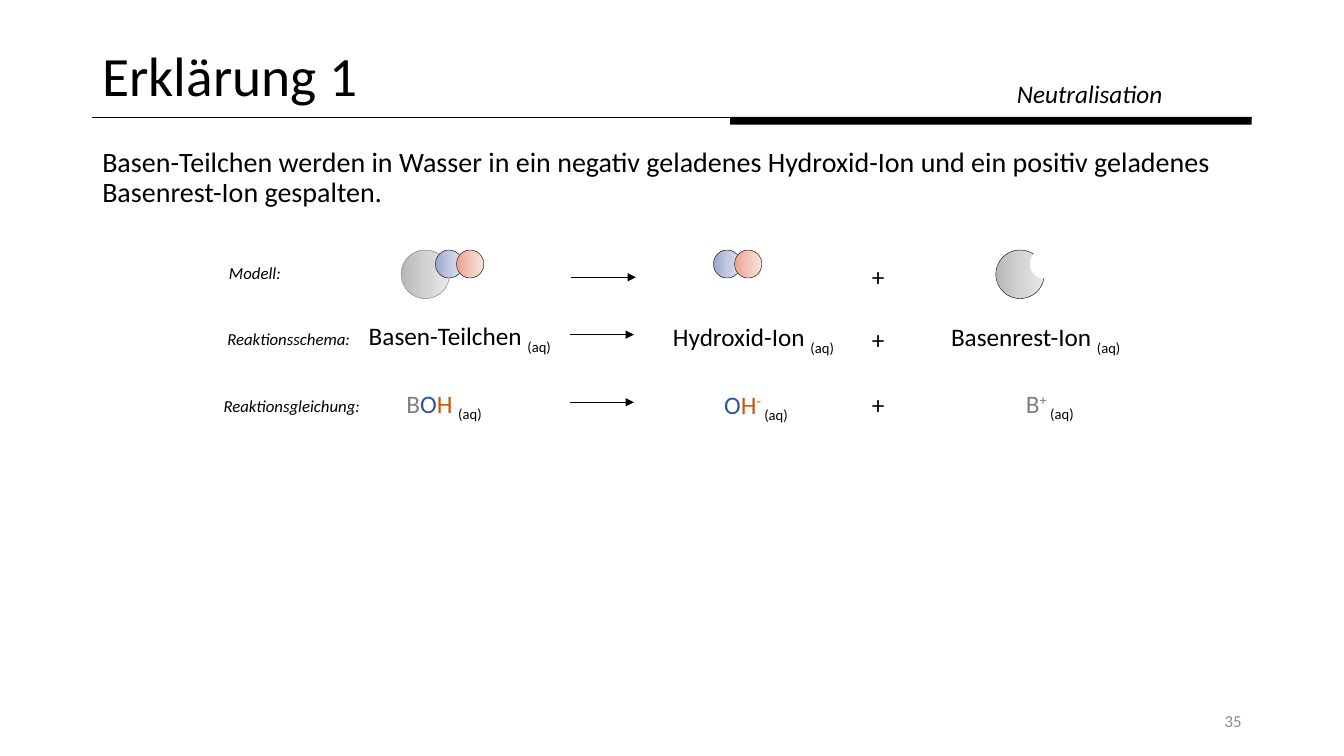
from copy import deepcopy
from dataclasses import dataclass

from pptx import Presentation
from pptx import util as u
from pptx.dml.color import RGBColor
from pptx.enum import shapes, text
from pptx.oxml import ns
from pptx.oxml.xmlchemy import OxmlElement


@dataclass(frozen=True)
class Theme:
    font: str = "Calibri"
    black: str = "000000"
    white: str = "FFFFFF"
    number: str = "8C8C8C"
    base: str = "808080"
    oxygen: str = "2F5597"
    hydrogen: str = "C55A11"
    base_shades: tuple = ("B7B7B7", "D2D2D2", "E9E9E9")
    oxygen_shades: tuple = ("99A5CC", "C2C8DE", "E1E4EE")
    hydrogen_shades: tuple = ("EDA08E", "F2C5BB", "F8E3DE")
    title_size: float = 39.6
    body_size: float = 20
    formula_size: float = 18
    label_size: float = 12
    hairline: float = 0.25
    rule: float = 0.5


def add_run(paragraph, content, *, font, size, color, italic=False, baseline=0):
    """Append one formatted run; baseline is a percentage."""
    run = paragraph.add_run()
    run.text = content
    run.font.name = font
    run.font.size = u.Pt(size)
    run.font.italic = italic
    run.font.color.rgb = RGBColor.from_string(color)
    if baseline:
        run._r.get_or_add_rPr().set("baseline", str(baseline * 1000))


class SlideBuilder:
    def __init__(self, slide, theme):
        self.slide = slide
        self.theme = theme

    def text(self, left, top, width, height, runs, size, align="LEFT",
             anchor="TOP", spacing=1.0, italic=False):
        """Runs are (text, color, baseline) tuples, or one plain string."""
        box = self.slide.shapes.add_textbox(*map(u.Pt, (left, top, width, height)))
        frame = box.text_frame
        frame.word_wrap = True
        frame.vertical_anchor = text.MSO_ANCHOR[anchor]
        paragraph = frame.paragraphs[0]
        paragraph.alignment = text.PP_ALIGN[align]
        paragraph.line_spacing = spacing
        if isinstance(runs, str):
            runs = [(runs, self.theme.black, 0)]
        for content, color, baseline in runs:
            add_run(paragraph, content, font=self.theme.font, size=size,
                    color=color, italic=italic, baseline=baseline)

    def shape(self, kind, left, top, width, height, fill, line=None):
        """Fill is one color, or a tuple of three gradient shades."""
        shape = self.slide.shapes.add_shape(
            shapes.MSO_SHAPE[kind], *map(u.Pt, (left, top, width, height)))
        shape.shadow.inherit = False
        if isinstance(fill, tuple):
            shape.fill.gradient()
            shape.fill.gradient_angle = 0
            stops = shape._element.spPr.find(ns.qn("a:gradFill")).gsLst
            stops.insert(1, deepcopy(stops[0]))
            for stop, shade, position in zip(shape.fill.gradient_stops, fill, (0, 0.5, 1)):
                stop.color.rgb = RGBColor.from_string(shade)
                stop.position = position
        else:
            shape.fill.solid()
            shape.fill.fore_color.rgb = RGBColor.from_string(fill)
        if line:
            shape.line.color.rgb = RGBColor.from_string(line)
            shape.line.width = u.Pt(self.theme.hairline)
        else:
            shape.line.fill.background()

    def large_ball(self, left, line):
        self.shape("OVAL", left, 178.6, 34.6, 34.6, self.theme.base_shades, line)

    def small_ball(self, left, fill, line):
        self.shape("OVAL", left, 178.6, 19.5, 20, fill, line)

    def hydroxide(self, left):
        self.small_ball(left, self.theme.oxygen_shades, self.theme.black)
        self.small_ball(left + 15.1, self.theme.hydrogen_shades, self.theme.black)

    def line(self, left, top, length, arrow=False):
        line = self.slide.shapes.add_connector(
            shapes.MSO_CONNECTOR.STRAIGHT, *map(u.Pt, (left, top, left + length, top)))
        line.line.color.rgb = RGBColor.from_string(self.theme.black)
        line.line.width = u.Pt(self.theme.rule)
        if arrow:
            head = OxmlElement("a:tailEnd")
            head.set("type", "triangle")
            line.line._get_or_add_ln().append(head)
        line._element.spPr.append(OxmlElement("a:effectLst"))


def build(builder):
    theme = builder.theme
    aqueous = ("(aq)", theme.black, -25)

    # Header and page number
    builder.line(66, 83.5, 828)
    builder.shape("RECTANGLE", 521.5, 83.5, 372.5, 5.5, theme.black)
    builder.text(66, 28.8, 828, 54.7, "Erklärung 1", theme.title_size,
                 anchor="MIDDLE", spacing=0.9)
    builder.text(719.3, 52.6, 198.7, 29, "Neutralisation", theme.formula_size, italic=True)
    builder.text(678, 500.5, 216, 28.8, [("35", theme.number, 0)], theme.label_size,
                 align="RIGHT", anchor="MIDDLE")

    # Statement
    builder.text(66, 102.2, 828, 383.8,
                 "Basen-Teilchen werden in Wasser in ein negativ geladenes Hydroxid-Ion "
                 "und ein positiv geladenes Basenrest-Ion gespalten.",
                 theme.body_size, spacing=0.9)

    # Row labels, reaction arrows and plus signs
    rows = [
        ("Modell:", 156.5, 184.3, 408.2, 198, 182.9),
        ("Reaktionsschema:", 155.3, 231, 406.8, 239, 228.4),
        ("Reaktionsgleichung:", 152.6, 278.8, 406.8, 287.3, 274.3),
    ]
    for label, left, top, arrow_left, arrow_top, plus_top in rows:
        builder.text(left, top, 116, 21.8, label, theme.label_size, italic=True)
        builder.line(arrow_left, arrow_top, 46, arrow=True)
        builder.text(615.8, plus_top, 22.5, 29, "+", theme.formula_size)

    # Particle models: base, hydroxide ion, base residue with a notch
    builder.large_ball(286.5, theme.base)
    builder.hydroxide(311)
    builder.hydroxide(509.6)
    builder.large_ball(711.3, theme.black)
    builder.small_ball(735.8, theme.white, theme.white)

    # Word equation
    for name, left, top, width in [("Basen-Teilchen ", 256.3, 225.5, 148.5),
                                   ("Hydroxid-Ion ", 473.6, 226.2, 142),
                                   ("Basenrest-Ion ", 672.2, 226.2, 140)]:
        builder.text(left, top, width, 29, [(name, theme.black, 0), aqueous],
                     theme.formula_size)

    # Symbol equation
    base = ("B", theme.base, 0)
    oxygen = ("O", theme.oxygen, 0)
    formulas = [
        (247, 273.6, 140.4, [base, oxygen, ("H ", theme.hydrogen, 0)]),
        (464.4, 274.3, 151.2,
         [oxygen, ("H", theme.hydrogen, 0), ("- ", theme.hydrogen, 30)]),
        (679.7, 273.6, 140.4, [base, ("+ ", theme.base, 30)]),
    ]
    for left, top, width, runs in formulas:
        builder.text(left, top, width, 29, runs + [aqueous], theme.formula_size,
                     align="CENTER")


def main():
    presentation = Presentation()
    presentation.slide_width = u.Pt(960)
    presentation.slide_height = u.Pt(540)
    slide = presentation.slides.add_slide(presentation.slide_layouts[6])
    build(SlideBuilder(slide, Theme()))
    presentation.save("out.pptx")


if __name__ == "__main__":
    main()
